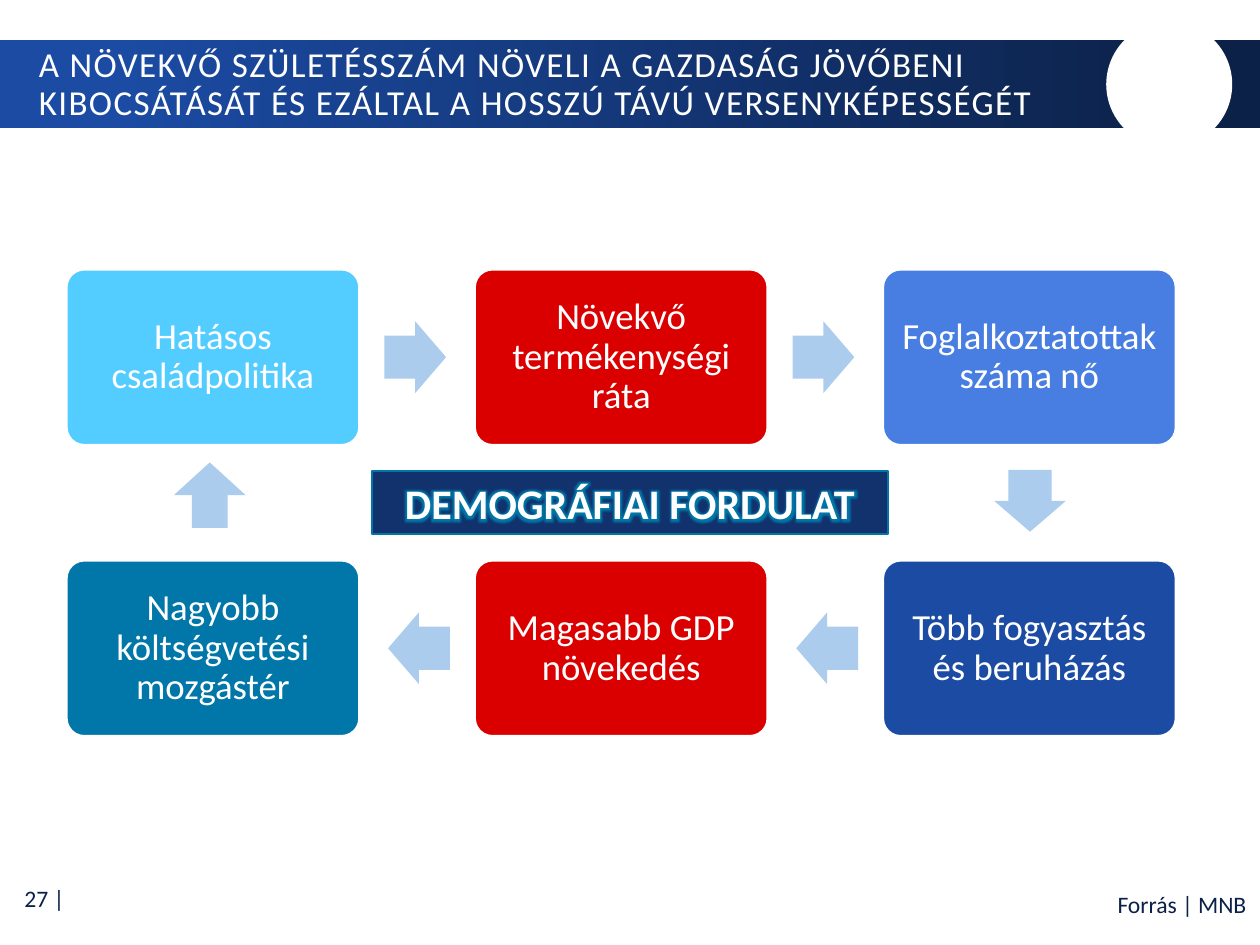
from dataclasses import dataclass

from lxml.etree import SubElement
from pptx import Presentation
from pptx.dml.color import RGBColor
from pptx.enum.shapes import MSO_SHAPE as Shape
from pptx.enum.text import MSO_ANCHOR as Anchor, PP_ALIGN as Align
from pptx.oxml.ns import qn
from pptx.util import Inches, Pt


@dataclass(frozen=True)
class Theme:
    face: str = "Calibri"
    white: str = "FFFFFF"
    navy: str = "0C2148"
    blue: str = "1B4BA3"
    label: str = "12326D"
    teal: str = "0075A6"
    pale: str = "ABCCED"
    glow: str = "0077A8"
    title: float = 20
    step: float = 21
    core: float = 24
    note: float = 13.5


theme = Theme()
STEPS = [
    [("Hatásos családpolitika", "53CCFF"),
     ("Növekvő termékenységi ráta", "DA0000"),
     ("Foglalkoztatottak száma nő", "487EE1")],
    [("Nagyobb költségvetési mozgástér", "0077A8"),
     ("Magasabb GDP növekedés", "DA0000"),
     ("Több fogyasztás és beruházás", "1B4BA3")],
]


def color(code):
    return RGBColor.from_string(code)


def add_shape(slide, kind, box, fill, edge=None):
    shape = slide.shapes.add_shape(kind, *map(Inches, box))
    shape.shadow.inherit = False
    shape.fill.solid()
    shape.fill.fore_color.rgb = color(fill)
    if edge:
        shape.line.color.rgb = color(edge)
        shape.line.width = Pt(1)
    else:
        shape.line.fill.background()
    return shape


def write(shape, text, size, tint, align, space=1.0, bold=False):
    frame = shape.text_frame
    frame.word_wrap = True
    frame.vertical_anchor = Anchor.MIDDLE
    para = frame.paragraphs[0]
    run = para.add_run()
    run.text = text
    para.alignment = align
    para.line_spacing = space
    font = para.font
    font.name, font.size, font.bold = theme.face, Pt(size), bold
    font.color.rgb = color(tint)
    return run


def add_text(slide, box, *style):
    return write(slide.shapes.add_textbox(*map(Inches, box)), *style)


def add_head(slide, box):
    left, top, width, height = box
    band = add_shape(slide, Shape.RECTANGLE, box, theme.blue)
    band.fill.gradient()
    band.fill.gradient_angle = 0
    ends = [(0.09, theme.blue), (0.95, theme.navy)]
    for stop, (place, tint) in zip(band.fill.gradient_stops, ends):
        stop.position = place
        stop.color.rgb = color(tint)
    add_shape(slide, Shape.OVAL, (left + width - 1.22, top - 0.15, 1, 1), theme.white)
    run = add_text(
        slide, (left + 0.21, top + 0.02, 8.64, height - 0.03),
        "A NÖVEKVŐ SZÜLETÉSSZÁM NÖVELI A GAZDASÁG JÖVŐBENI "
        "KIBOCSÁTÁSÁT ÉS EZÁLTAL A HOSSZÚ TÁVÚ VERSENYKÉPESSÉGÉT",
        theme.title, theme.white, Align.LEFT, 0.9)
    run.font._element.set("spc", "80")


def add_step(slide, box, text, fill):
    card = add_shape(slide, Shape.ROUNDED_RECTANGLE, box, fill, theme.white)
    card.adjustments[0] = 0.1
    frame = card.text_frame
    frame.margin_left = frame.margin_right = Inches(0.09)
    frame.margin_top = frame.margin_bottom = Inches(0.09)
    write(card, text, theme.step, theme.white, Align.CENTER, 0.9)


def add_arrow(slide, left, top, turn):
    arrow = add_shape(slide, Shape.RIGHT_ARROW, (left, top, 0.49, 0.57), theme.pale)
    arrow.adjustments[0] = 0.6
    arrow.rotation = turn


def add_core(slide, box):
    core = add_shape(slide, Shape.RECTANGLE, box, theme.label, theme.teal)
    run = write(core, "DEMOGRÁFIAI FORDULAT", theme.core, theme.white,
                Align.CENTER, bold=True)
    effects = SubElement(run.font._element, qn("a:effectLst"))
    glow = SubElement(effects, qn("a:glow"), rad=str(Pt(8)))
    SubElement(glow, qn("a:srgbClr"), val=theme.glow)


def add_cycle(slide, box):
    left, top, width, height = box
    wide, high = 2.32, 1.39
    across, down = (width - wide) / 2, height - high
    for row, steps in enumerate(STEPS):
        for col, (text, fill) in enumerate(steps):
            x, y = left + col * across, top + row * down
            add_step(slide, (x, y, wide, high), text, fill)
            if col < 2:
                add_arrow(slide, x + wide + 0.2 + row * 0.03, y + 0.41, row * 180)
    add_arrow(slide, left + 2 * across + 0.92, top + 1.55, 90)
    add_shape(slide, Shape.UP_ARROW, (left + 0.85, top + 1.53, 0.57, 0.52), theme.pale)
    add_core(slide, (left + 2.42, top + 1.6, 4.1, 0.5))


def add_foot(slide, box):
    left, top, width, height = box
    add_text(slide, (left, top, 0.6, 0.37), "27 |", theme.note, theme.navy, Align.RIGHT)
    add_text(slide, (left + width - 3.94, top + height - 0.4, 3.94, 0.4),
             "Forrás | MNB", theme.note, theme.navy, Align.RIGHT, 0.9)


def main():
    deck = Presentation()
    deck.slide_width, deck.slide_height = Inches(10), Inches(7.5)
    slide = deck.slides.add_slide(deck.slide_layouts[6])
    add_head(slide, (0, 0.32, 10, 0.7))
    add_cycle(slide, (0.53, 2.14, 8.8, 3.7))
    add_foot(slide, (0.01, 6.94, 9.98, 0.45))
    deck.save("out.pptx")


if __name__ == "__main__":
    main()
